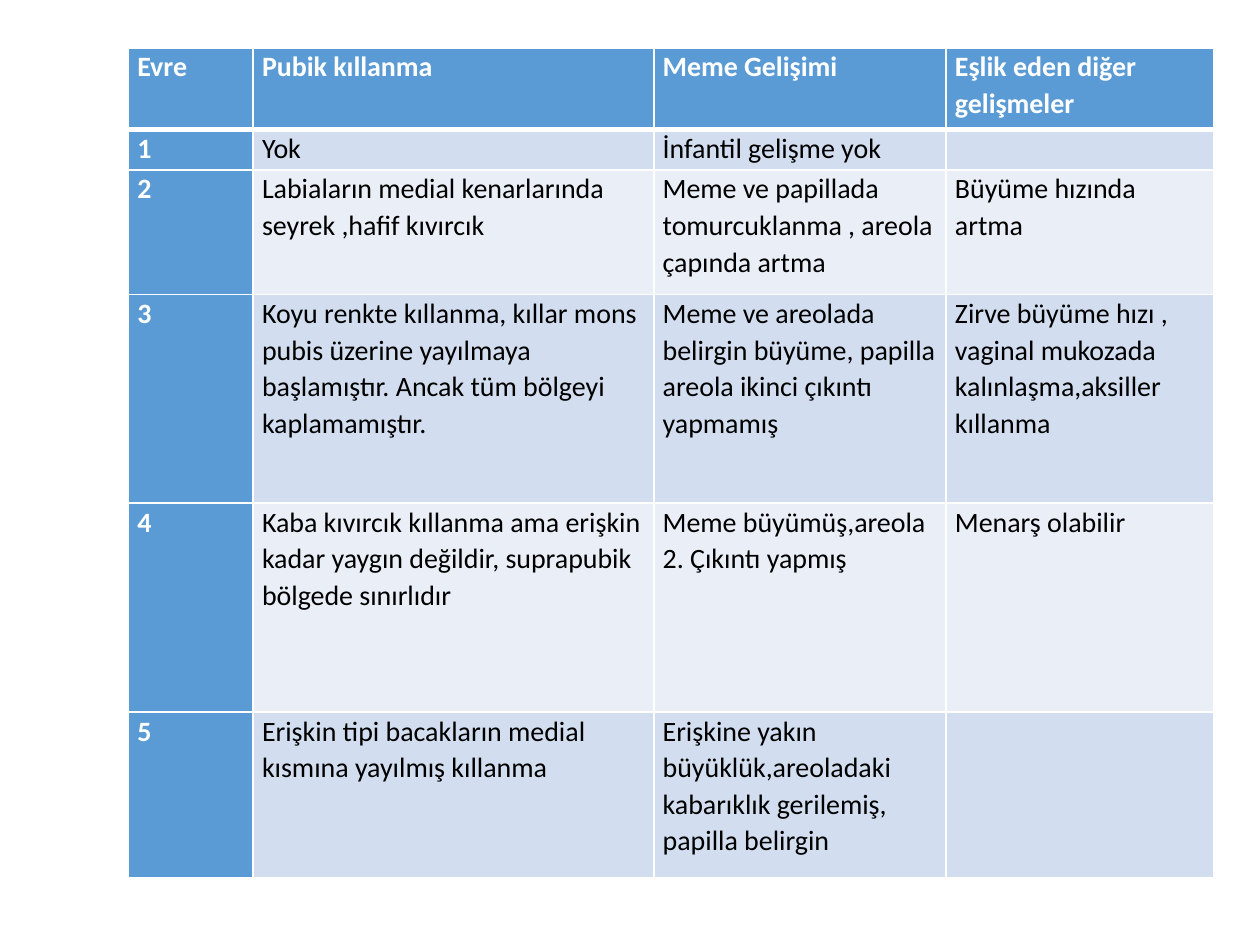
from lxml.etree import SubElement
from pptx import Presentation
from pptx.dml.color import RGBColor
from pptx.oxml.ns import qn
from pptx.util import Inches, Pt

COLORS = {"head": "5B9BD5", "odd": "D2DEEF", "even": "EAEFF7",
          "light": "FFFFFF", "dark": "000000"}
COLS = [0.99, 3.18, 2.32, 2.12]
ROWS = [0.65, 0.32, 0.99, 1.66, 1.66, 1.32]
STAGES = [
    ["Evre", "Pubik kıllanma", "Meme Gelişimi", "Eşlik eden diğer gelişmeler"],
    ["1", "Yok", "İnfantil gelişme yok", ""],
    ["2", "Labiaların medial kenarlarında seyrek ,hafif kıvırcık",
     "Meme ve papillada tomurcuklanma , areola çapında artma",
     "Büyüme hızında artma"],
    ["3", "Koyu renkte kıllanma, kıllar mons pubis üzerine yayılmaya "
     "başlamıştır. Ancak tüm bölgeyi kaplamamıştır.",
     "Meme ve areolada belirgin büyüme, papilla areola ikinci çıkıntı yapmamış",
     "Zirve büyüme hızı , vaginal mukozada kalınlaşma,aksiller kıllanma"],
    ["4", "Kaba kıvırcık kıllanma ama erişkin kadar yaygın değildir, "
     "suprapubik bölgede sınırlıdır",
     "Meme büyümüş,areola 2. Çıkıntı yapmış", "Menarş olabilir"],
    ["5", "Erişkin tipi bacakların medial kısmına yayılmış kıllanma",
     "Erişkine yakın büyüklük,areoladaki kabarıklık gerilemiş, papilla belirgin",
     ""],
]


def rgb(name):
    """Return the named colour."""
    return RGBColor.from_string(COLORS[name])


def set_borders(cell, top, bottom):
    """Draw white cell borders with the given top and bottom widths in points."""
    tcPr = cell._tc.get_or_add_tcPr()
    widths = {"a:lnL": 1, "a:lnR": 1, "a:lnT": top, "a:lnB": bottom}
    for tag, width in widths.items():
        ln = SubElement(tcPr, qn(tag), w=str(Pt(width)))
        fill = SubElement(ln, qn("a:solidFill"))
        SubElement(fill, qn("a:srgbClr"), val=COLORS["light"])


def fill_cell(cell, text, row, col):
    """Style one cell by its place in the table and write its text."""
    heading = row == 0 or col == 0
    set_borders(cell, 3 if row == 1 else 1, 3 if row == 0 else 1)
    cell.fill.solid()
    cell.fill.fore_color.rgb = rgb("head" if heading else "odd" if row % 2 else "even")
    cell.margin_left = cell.margin_right = Inches(0.07)
    cell.margin_top = cell.margin_bottom = 0
    if not text:
        return
    p = cell.text_frame.paragraphs[0]
    p.line_spacing = 1.07
    p.space_after = Pt(8)
    r = p.add_run()
    r.text = text
    r.font.name = "Calibri"
    r.font.size = Pt(16)
    r.font.bold = heading
    r.font.color.rgb = rgb("light" if heading else "dark")


def add_stage_table(s, left, top, width, height):
    """Place the table of stages in the given box."""
    table = s.shapes.add_table(len(ROWS), len(COLS), left, top, width, height).table
    for column, share in zip(table.columns, COLS):
        column.width = int(width * share / sum(COLS))
    for line, share in zip(table.rows, ROWS):
        line.height = int(height * share / sum(ROWS))
    for row, texts in enumerate(STAGES):
        for col, text in enumerate(texts):
            fill_cell(table.cell(row, col), text, row, col)


def main():
    """Build the slide and save it."""
    prs = Presentation()
    prs.slide_width, prs.slide_height = Inches(10), Inches(7.5)
    s = prs.slides.add_slide(prs.slide_layouts[6])
    add_stage_table(s, Inches(1.02), Inches(0.38), Inches(8.61), Inches(6.59))
    prs.save("out.pptx")


if __name__ == "__main__":
    main()
